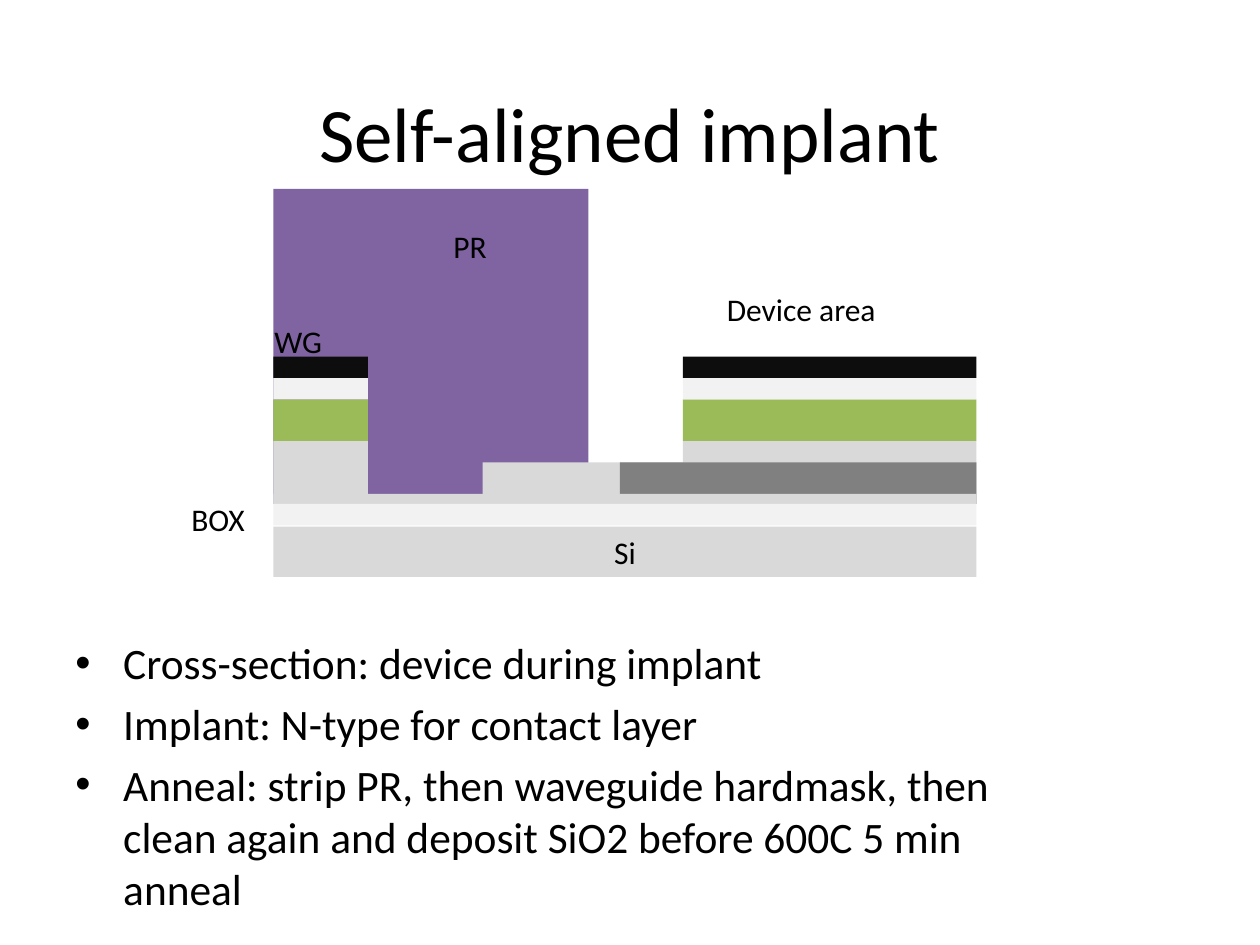
from pptx import Presentation
from pptx.dml.color import RGBColor
from pptx.enum.shapes import MSO_SHAPE as Shape
from pptx.enum.text import MSO_ANCHOR as Anchor, PP_ALIGN as Align
from pptx.oxml.ns import qn
from pptx.util import Inches, Pt
from lxml.etree import SubElement

COLORS = {
    "text": "000000",
    "resist": "8064A2",
    "silicon": "D9D9D9",
    "oxide": "F2F2F2",
    "implant": "808080",
    "active": "9BBB59",
    "hardmask": "0D0D0D",
}
FONT = "Calibri"
LEFT, RIGHT = 2.17, 7.75
WIDTH = RIGHT - LEFT

# Mesa layers from the bottom up: top, height, material, shape
MESA_LAYERS = [
    (3.5, 0.5, "silicon", Shape.RECTANGLE),
    (3.17, 0.33, "active", Shape.SNIP_2_SAME_RECTANGLE),
    (3, 0.17, "oxide", Shape.RECTANGLE),
    (2.83, 0.17, "hardmask", Shape.RECTANGLE),
]
BULLETS = [
    "Cross-section: device during implant",
    "Implant: N-type for contact layer",
    "Anneal: strip PR, then waveguide hardmask, then clean again "
    "and deposit SiO2 before 600C 5 min anneal",
]


def style_paragraph(paragraph, size, align=Align.LEFT):
    paragraph.alignment = align
    paragraph.font.name = FONT
    paragraph.font.size = Pt(size)
    paragraph.font.color.rgb = RGBColor.from_string(COLORS["text"])


def add_layer(slide, left, top, width, height, material, kind=Shape.RECTANGLE):
    shape = slide.shapes.add_shape(
        kind, Inches(left), Inches(top), Inches(width), Inches(height))
    shape.shadow.inherit = False
    shape.fill.solid()
    shape.fill.fore_color.rgb = RGBColor.from_string(COLORS[material])
    shape.line.fill.background()
    if kind == Shape.SNIP_2_SAME_RECTANGLE:
        shape.adjustments[0] = shape.adjustments[1] = 0
    return shape


def add_mesa(slide, left, width):
    for top, height, material, kind in MESA_LAYERS:
        add_layer(slide, left, top, width, height, material, kind)


def add_text(slide, left, top, width, height, lines, size=18,
             align=Align.LEFT, anchor=Anchor.TOP):
    box = slide.shapes.add_textbox(
        Inches(left), Inches(top), Inches(width), Inches(height))
    frame = box.text_frame
    frame.word_wrap = True
    frame.vertical_anchor = anchor
    frame.text = "\n".join(lines)
    for paragraph in frame.paragraphs:
        style_paragraph(paragraph, size, align)
    return frame


def add_bullets(slide):
    frame = add_text(slide, 0.5, 5, 8, 2, BULLETS, size=24.8)
    for paragraph in frame.paragraphs:
        paragraph.space_before = Pt(5)
        properties = paragraph._p.get_or_add_pPr()
        properties.set("marL", str(Inches(0.38)))
        properties.set("indent", str(Inches(-0.38)))
        SubElement(properties, qn("a:buFont"), typeface="Arial")
        SubElement(properties, qn("a:buChar"), char="•")
        # The schema wants the default run properties last
        properties.append(properties.find(qn("a:defRPr")))


def main():
    presentation = Presentation()
    presentation.slide_width = Inches(10)
    presentation.slide_height = Inches(7.5)
    slide = presentation.slides.add_slide(presentation.slide_layouts[6])

    # Photoresist and contact layer
    add_layer(slide, LEFT, 1.5, 2.5, 2.5, "resist")
    add_layer(slide, 3.83, 3.67, RIGHT - 3.83, 0.25, "silicon")

    # Waveguide and device mesas
    add_mesa(slide, LEFT, 0.75)
    add_mesa(slide, 5.42, RIGHT - 5.42)

    # Implanted region, silicon floor, buried oxide and substrate
    add_layer(slide, 4.92, 3.67, RIGHT - 4.92, 0.33, "implant")
    add_layer(slide, LEFT, 3.92, WIDTH, 0.08, "silicon")
    add_layer(slide, LEFT, 4, WIDTH, 0.17, "oxide")
    substrate = add_layer(slide, LEFT, 4.18, WIDTH, 0.4, "silicon")
    substrate.text_frame.text = "Si"
    style_paragraph(substrate.text_frame.paragraphs[0], 18, Align.CENTER)

    # Labels
    add_text(slide, 1.42, 3.92, 0.67, 0.42, ["BOX"])
    add_text(slide, 5.67, 2.25, 1.58, 0.4, ["Device area"])
    add_text(slide, 2.08, 2.51, 1.58, 0.4, ["WG"])
    add_text(slide, 3.5, 1.75, 1.58, 0.4, ["PR"])

    # Title and notes on the process
    add_text(slide, 0.5, 0.42, 9, 1.25, ["Self-aligned implant"], size=44,
             align=Align.CENTER, anchor=Anchor.MIDDLE)
    add_bullets(slide)

    presentation.save("out.pptx")


if __name__ == "__main__":
    main()
